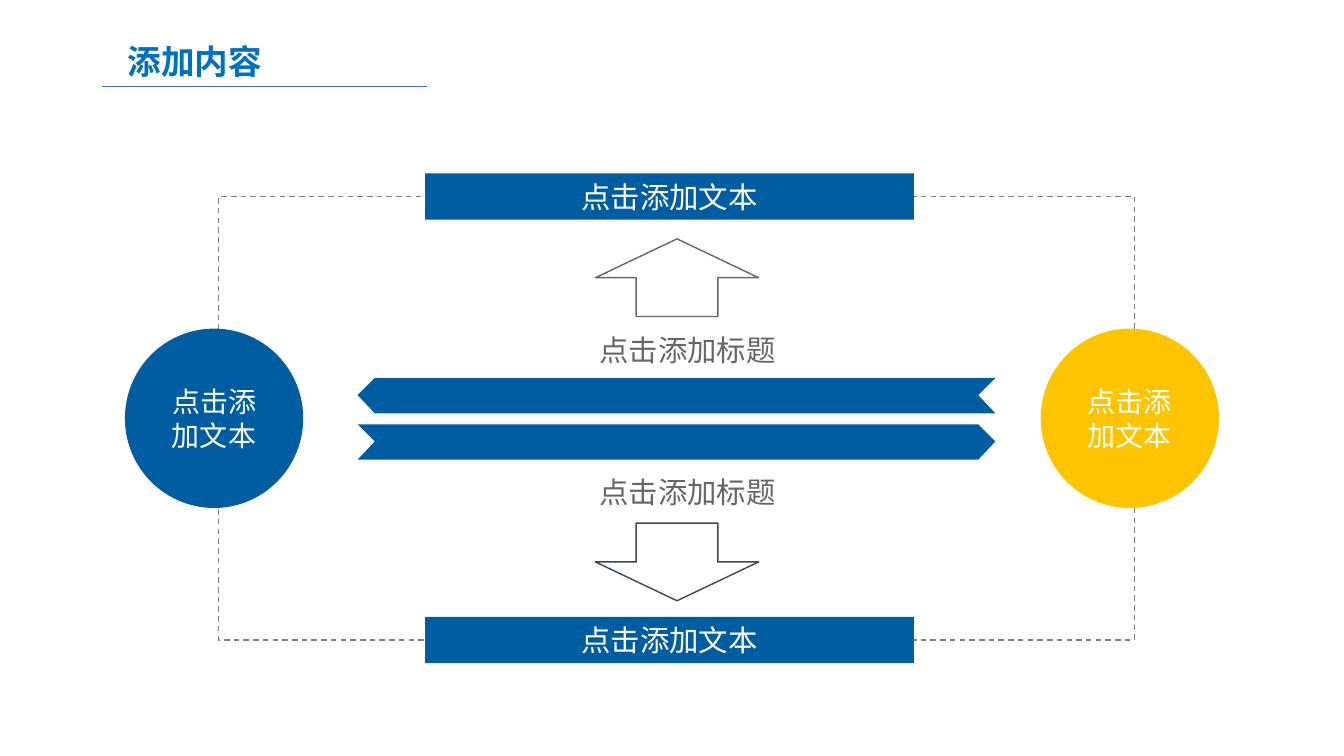
from lxml import etree
from pptx import Presentation
from pptx.dml.color import RGBColor
from pptx.enum.dml import MSO_LINE
from pptx.enum.shapes import MSO_CONNECTOR, MSO_SHAPE
from pptx.enum.text import MSO_ANCHOR, MSO_AUTO_SIZE, PP_ALIGN
from pptx.oxml.ns import qn
from pptx.util import Emu, Pt

PX = 9144
FONT = "Noto Sans CJK SC"
BLUE, YELLOW, WHITE, GRAY = "005DA2", "FFC400", "FFFFFF", "666666"
RECTANGLE, OVAL = MSO_SHAPE.RECTANGLE, MSO_SHAPE.OVAL
UP_ARROW, DOWN_ARROW = MSO_SHAPE.UP_ARROW, MSO_SHAPE.DOWN_ARROW
CENTER, LEFT = PP_ALIGN.CENTER, PP_ALIGN.LEFT
TOP, MIDDLE = MSO_ANCHOR.TOP, MSO_ANCHOR.MIDDLE


def paint(shape, fill=None, line=None):
    shape.shadow.inherit = False
    for target, color in ((shape.fill, fill), (shape.line.fill, line)):
        if color:
            target.solid()
            target.fore_color.rgb = RGBColor.from_string(color)
        else:
            target.background()
    if line:
        shape.line.width = Pt(1)


def write(shape, text, size, color, align=CENTER, anchor=MIDDLE, wrap=True, bold=False):
    frame = shape.text_frame
    frame.auto_size = MSO_AUTO_SIZE.NONE
    frame.word_wrap = wrap
    frame.vertical_anchor = anchor
    paragraph = frame.paragraphs[0]
    paragraph.alignment = align
    run = paragraph.add_run()
    run.text = text
    run.font.size = Pt(size)
    run.font.bold = bold
    run.font.name = FONT
    run.font.color.rgb = RGBColor.from_string(color)
    east_asian = etree.SubElement(run.font._element, qn("a:ea"))
    east_asian.set("typeface", FONT)


presentation = Presentation()
presentation.slide_width = Emu(1334 * PX)
presentation.slide_height = Emu(750 * PX)
slide = presentation.slides.add_slide(presentation.slide_layouts[5])
shapes = slide.shapes

title = shapes.title
title.left, title.top, title.width, title.height = [Emu(v * PX) for v in (116, 36, 155, 50)]
write(title, "添加内容", 24, "0070C0", anchor=TOP, wrap=False, bold=True)

underline = shapes.add_connector(MSO_CONNECTOR.STRAIGHT, 101 * PX, 86 * PX, 424 * PX, 86 * PX)
underline.line.color.rgb = RGBColor.from_string("4472C4")
underline.line.width = Pt(0.5)
etree.SubElement(underline._element.spPr, qn("a:effectLst"))

loop = shapes.add_shape(RECTANGLE, 217 * PX, 195 * PX, 909 * PX, 440 * PX)
paint(loop, line="7F7F7F")
loop.line.dash_style = MSO_LINE.DASH

for left, color in ((124, BLUE), (1033, YELLOW)):
    circle = shapes.add_shape(OVAL, left * PX, 326 * PX, 177 * PX, 178 * PX)
    paint(circle, fill=color)
    write(circle, "点击添加文本", 20, WHITE)

for top in (325, 465):
    caption = shapes.add_textbox(585 * PX, top * PX, 199 * PX, 46 * PX)
    write(caption, "点击添加标题", 21, GRAY, align=LEFT, anchor=TOP, wrap=False)

for kind, top, color in ((UP_ARROW, 237, GRAY), (DOWN_ARROW, 519, "414455")):
    arrow = shapes.add_shape(kind, 591 * PX, top * PX, 162 * PX, 77 * PX)
    paint(arrow, line=color)

for top in (172, 612):
    bar = shapes.add_shape(RECTANGLE, 422 * PX, top * PX, 485 * PX, 46 * PX)
    paint(bar, fill=BLUE)
    write(bar, "点击添加文本", 21, WHITE)

for tail, top, direction in ((355, 421, 1), (988, 375, -1)):
    head = tail + 633 * direction
    notch = 17 * direction
    middle, bottom = top + 17, top + 35
    builder = shapes.build_freeform(tail, top, scale=PX)
    builder.add_line_segments([
        (head - notch, top), (head, middle), (head - notch, bottom),
        (tail, bottom), (tail + notch, middle),
    ])
    paint(builder.convert_to_shape(), fill=BLUE)

presentation.save("out.pptx")
